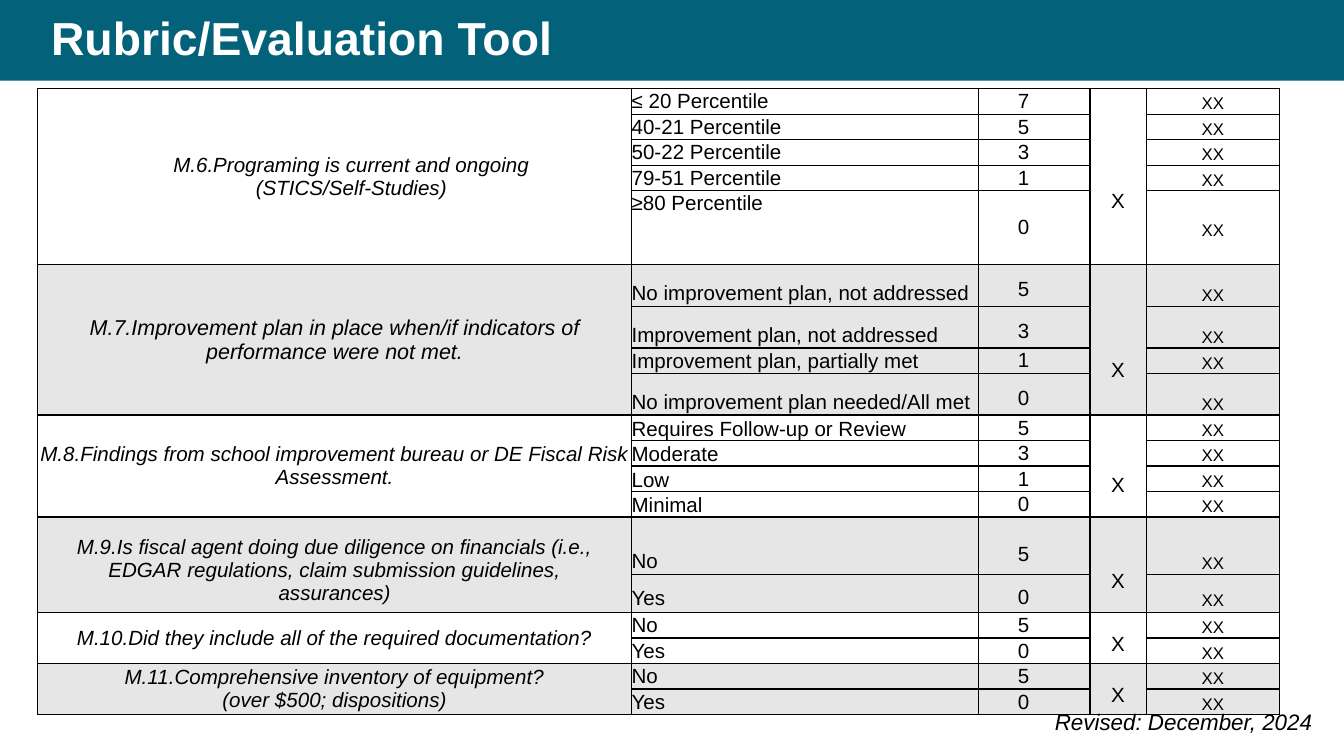
from lxml.etree import SubElement
from pptx import Presentation
from pptx.dml.color import RGBColor
from pptx.enum.shapes import MSO_SHAPE
from pptx.enum.text import MSO_ANCHOR, MSO_AUTO_SIZE, PP_ALIGN
from pptx.oxml.ns import qn
from pptx.util import Inches, Pt

TEAL = RGBColor(0x03, 0x61, 0x7A)
WHITE = RGBColor(0xFF, 0xFF, 0xFF)
BLACK = RGBColor(0x00, 0x00, 0x00)
GREY = RGBColor(0xE7, 0xE6, 0xE6)

COLUMN_WIDTHS = [4.42, 2.58, 0.83, 0.42, 0.99]
ROW = 0.19
TIGHT = (0.01, 0, 0.04)
TALL = (0.13, 0.06, 0.16)

LABEL_FORMAT = {"size": Pt(11), "italic": True}
TEXT_FORMAT = {"size": Pt(11), "italic": False}
TOTAL_FORMAT = {"size": Pt(9), "italic": False}

SECTIONS = [
    {"label": ["M.6.Programing is current and ongoing", "(STICS/Self-Studies)"],
     "label_insets": (0.25, 0, 0), "factor_top": 0.37,
     "levels": [("≤ 20 Percentile", 7, ROW, TIGHT),
                ("40-21 Percentile", 5, ROW, TIGHT),
                ("50-22 Percentile", 3, ROW, TIGHT),
                ("79-51 Percentile", 1, ROW, TIGHT),
                ("≥80 Percentile", 0, 0.55, TIGHT)]},
    {"label": ["M.7.Improvement plan in place when/if indicators of "
               "performance were not met."],
     "label_size": 11.5, "factor_top": 0.45,
     "levels": [("No improvement plan, not addressed", 5, 0.31, TALL),
                ("Improvement plan, not addressed", 3, 0.31, TALL),
                ("Improvement plan, partially met", 1, ROW, TIGHT),
                ("No improvement plan needed/All met", 0, 0.31, TALL)]},
    {"label": ["M.8.Findings from school improvement bureau or DE Fiscal Risk "
               "Assessment."],
     "factor_top": 0.28, "criterion_anchor": MSO_ANCHOR.BOTTOM,
     "levels": [("Requires Follow-up or Review", 5, ROW, TIGHT),
                ("Moderate", 3, ROW, TIGHT),
                ("Low", 1, ROW, TIGHT),
                ("Minimal", 0, ROW, TIGHT)]},
    {"label": ["M.9.Is fiscal agent doing due diligence on financials (i.e., "
               "EDGAR regulations, claim submission guidelines, assurances)"],
     "label_insets": (0.17, 0.08, 0.17), "factor_top": 0.25,
     "levels": [("No", 5, 0.43, (0.24, 0.12, 0.27)),
                ("Yes", 0, 0.28, (0.09, 0.05, 0.11))]},
    {"label": ["M.10.Did they include all of the required documentation?"],
     "factor_top": 0.1,
     "levels": [("No", 5, ROW, TIGHT), ("Yes", 0, ROW, TIGHT)]},
    {"label": ["M.11.Comprehensive inventory of equipment?",
               "(over $500; dispositions)"],
     "factor_top": 0.1,
     "levels": [("No", 5, ROW, TIGHT), ("Yes", 0, ROW, TIGHT)]},
]


def format_run(run, formats, color=BLACK):
    for name, value in formats.items():
        setattr(run.font, name, value)
    run.font.name = "Arial"
    run.font.color.rgb = color


def style_cell(cell, fill):
    properties = cell._tc.get_or_add_tcPr()
    for side in ("a:lnL", "a:lnR", "a:lnT", "a:lnB"):
        border = SubElement(properties, qn(side), w=str(Pt(0.75)))
        color = SubElement(SubElement(border, qn("a:solidFill")), qn("a:srgbClr"))
        color.set("val", str(BLACK))
    cell.fill.solid()
    cell.fill.fore_color.rgb = fill
    cell.margin_left = cell.margin_top = cell.margin_right = cell.margin_bottom = 0


def write_cell(cell, lines, formats, align=PP_ALIGN.CENTER,
               anchor=MSO_ANCHOR.MIDDLE, insets=(0, 0, 0), spacing=None):
    cell.vertical_anchor = anchor
    cell.margin_left, cell.margin_top, cell.margin_right = map(Inches, insets)
    cell.text = "\n".join(lines)
    for paragraph in cell.text_frame.paragraphs:
        paragraph.alignment = align
        paragraph.line_spacing = spacing
        format_run(paragraph.runs[0], formats)


def fill_section(table, top, section, fill):
    levels = section["levels"]
    bottom = top + len(levels) - 1
    for row in range(top, bottom + 1):
        for column in range(len(COLUMN_WIDTHS)):
            style_cell(table.cell(row, column), fill)
    for column in (0, 3):
        table.cell(top, column).merge(table.cell(bottom, column))

    label_format = LABEL_FORMAT | {"size": Pt(section.get("label_size", 11))}
    write_cell(table.cell(top, 0), section["label"], label_format,
               insets=section.get("label_insets", (0, 0, 0)))
    write_cell(table.cell(top, 3), ["X"], TEXT_FORMAT,
               insets=(0, section["factor_top"], 0))

    anchor = section.get("criterion_anchor", MSO_ANCHOR.TOP)
    for row, (criterion, score, height, tops) in enumerate(levels, top):
        criterion_top, score_top, total_top = tops
        table.rows[row].height = Inches(height)
        write_cell(table.cell(row, 1), [criterion], TEXT_FORMAT, PP_ALIGN.LEFT,
                   anchor, (0, criterion_top, 0),
                   Pt(12.4) if anchor == MSO_ANCHOR.TOP else None)
        write_cell(table.cell(row, 2), [str(score)], TEXT_FORMAT, PP_ALIGN.RIGHT,
                   insets=(0, score_top, 0.45), spacing=Pt(12.4))
        write_cell(table.cell(row, 4), ["XX"], TOTAL_FORMAT,
                   insets=(0, total_top, 0), spacing=Pt(10))


def add_rubric(slide, left, top, width):
    levels = [level for section in SECTIONS for level in section["levels"]]
    height = sum(level[2] for level in levels)
    table = slide.shapes.add_table(
        len(levels), len(COLUMN_WIDTHS), Inches(left), Inches(top),
        Inches(width), Inches(height)).table
    table.first_row = table.horz_banding = False
    for column, column_width in zip(table.columns, COLUMN_WIDTHS):
        column.width = Inches(column_width)
    row = 0
    for index, section in enumerate(SECTIONS):
        fill_section(table, row, section, GREY if index % 2 else WHITE)
        row += len(section["levels"])


def add_header(slide, left, top, width, height):
    band = slide.shapes.add_shape(MSO_SHAPE.RECTANGLE, Inches(left), Inches(top),
                                  Inches(width), Inches(height))
    band.shadow.inherit = False
    band.fill.solid()
    band.fill.fore_color.rgb = TEAL
    band.line.fill.background()
    slide.shapes._spTree.insert(2, band._element)

    title = slide.shapes.title
    title.left, title.top = Inches(left + 0.28), Inches(top)
    title.width, title.height = Inches(width - 0.76), Inches(height)
    frame = title.text_frame
    frame.text = "Rubric/Evaluation Tool"
    frame.auto_size = MSO_AUTO_SIZE.NONE
    frame.vertical_anchor = MSO_ANCHOR.MIDDLE
    heading = frame.paragraphs[0]
    heading.alignment = PP_ALIGN.LEFT
    heading.line_spacing = 0.9
    format_run(heading.runs[0], {"size": Pt(24.8), "bold": True}, WHITE)


def add_revision(slide, left, top, width, height):
    revision = slide.shapes.add_textbox(Inches(left), Inches(top),
                                        Inches(width), Inches(height))
    frame = revision.text_frame
    frame.word_wrap = True
    frame.auto_size = MSO_AUTO_SIZE.SHAPE_TO_FIT_TEXT
    frame.text = "Revised: December, 2024"
    format_run(frame.paragraphs[0].runs[0], {"size": Pt(12), "italic": True})


def main():
    presentation = Presentation()
    presentation.slide_width = Inches(10)
    presentation.slide_height = Inches(10 * 9 / 16)
    slide = presentation.slides.add_slide(presentation.slide_layouts[5])
    add_header(slide, 0, 0, 10, 0.6)
    add_rubric(slide, 0.28, 0.66, 9.24)
    add_revision(slide, 7.75, 5.22, 2.25, 0.3)
    presentation.save("out.pptx")


if __name__ == "__main__":
    main()
